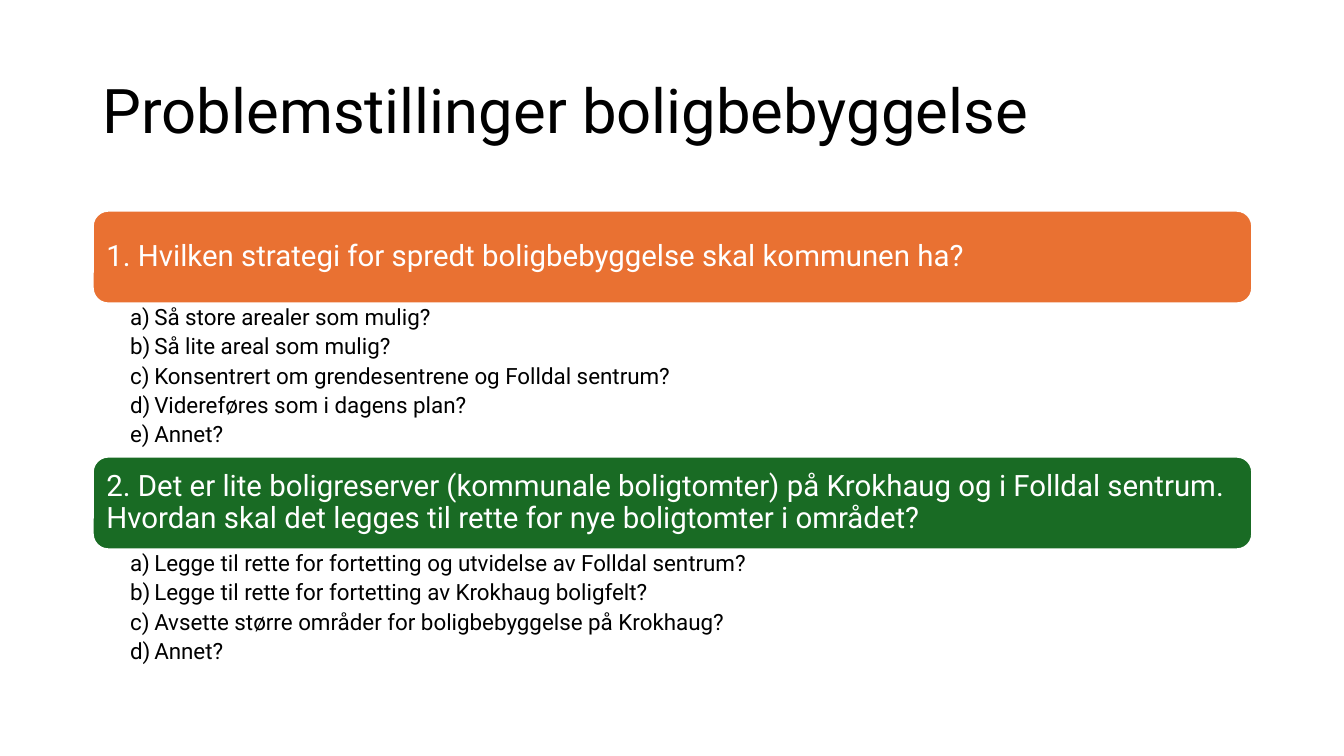
from dataclasses import dataclass

from lxml.etree import SubElement
from pptx import Presentation
from pptx.dml.color import RGBColor
from pptx.enum.shapes import MSO_SHAPE as Preset
from pptx.enum.text import MSO_ANCHOR as Anchor, PP_ALIGN as Align
from pptx.oxml.ns import qn
from pptx.slide import Slide
from pptx.text.text import TextFrame, _Paragraph as Paragraph
from pptx.util import Inches, Pt

BLACK = RGBColor(0x00, 0x00, 0x00)
WHITE = RGBColor(0xFF, 0xFF, 0xFF)
ORANGE = RGBColor(0xE9, 0x71, 0x32)
GREEN = RGBColor(0x19, 0x6B, 0x24)

FONT = "Roboto"
LEFT = 0.92
WIDTH = 11.5
TOP = 2.09
HEADING_HEIGHT = 0.92
LETTER_INDENT = 0.24


@dataclass(frozen=True)
class Issue:
    heading: str
    color: RGBColor
    options: tuple[str, ...]
    options_height: float


ISSUES = (
    Issue(
        "1. Hvilken strategi for spredt boligbebyggelse skal kommunen ha?",
        ORANGE,
        (
            "Så store arealer som mulig?",
            "Så lite areal som mulig?",
            "Konsentrert om grendesentrene og Folldal sentrum?",
            "Videreføres som i dagens plan?",
            "Annet?",
        ),
        1.52,
    ),
    Issue(
        "2. Det er lite boligreserver (kommunale boligtomter) på Krokhaug og i "
        "Folldal sentrum. Hvordan skal det legges til rette for nye boligtomter "
        "i området?",
        GREEN,
        (
            "Legge til rette for fortetting og utvidelse av Folldal sentrum?",
            "Legge til rette for fortetting av Krokhaug boligfelt?",
            "Avsette større områder for boligbebyggelse på Krokhaug?",
            "Annet?",
        ),
        1.21,
    ),
)


def set_frame(frame: TextFrame, anchor: Anchor, left: float, top: float,
              right: float) -> None:
    frame.word_wrap = True
    frame.vertical_anchor = anchor
    frame.margin_left = Inches(left)
    frame.margin_right = Inches(right)
    frame.margin_top = frame.margin_bottom = Inches(top)


def write(paragraph: Paragraph, text: str, size: float, color: RGBColor) -> None:
    paragraph.alignment = Align.LEFT
    paragraph.line_spacing = 0.9
    run = paragraph.add_run()
    run.text = text
    run.font.name = FONT
    run.font.size = Pt(size)
    run.font.color.rgb = color


def add_letter(paragraph: Paragraph) -> None:
    properties = paragraph._p.get_or_add_pPr()
    properties.set("marL", str(Inches(LETTER_INDENT)))
    properties.set("indent", str(-Inches(LETTER_INDENT)))
    SubElement(properties, qn("a:buFont"), typeface="+mj-lt")
    SubElement(properties, qn("a:buAutoNum"), type="alphaLcParenR")


def add_title(slide: Slide, text: str) -> None:
    title = slide.shapes.add_textbox(
        Inches(LEFT), Inches(0.4), Inches(WIDTH), Inches(1.45))
    set_frame(title.text_frame, Anchor.MIDDLE, 0.1, 0.05, 0.1)
    write(title.text_frame.paragraphs[0], text, 44, BLACK)


def add_heading(slide: Slide, issue: Issue, top: float) -> None:
    heading = slide.shapes.add_shape(
        Preset.ROUNDED_RECTANGLE, Inches(LEFT), Inches(top),
        Inches(WIDTH), Inches(HEADING_HEIGHT))
    heading.shadow.inherit = False
    heading.fill.solid()
    heading.fill.fore_color.rgb = issue.color
    heading.line.color.rgb = WHITE
    heading.line.width = Pt(1.5)
    set_frame(heading.text_frame, Anchor.MIDDLE, 0.09, 0.09, 0.09)
    write(heading.text_frame.paragraphs[0], issue.heading, 21, WHITE)


def add_options(slide: Slide, issue: Issue, top: float) -> None:
    options = slide.shapes.add_textbox(
        Inches(LEFT), Inches(top), Inches(WIDTH), Inches(issue.options_height))
    frame = options.text_frame
    set_frame(frame, Anchor.TOP, 0.37, 0.03, 0.16)
    for index, option in enumerate(issue.options):
        paragraph = frame.add_paragraph() if index else frame.paragraphs[0]
        add_letter(paragraph)
        paragraph.space_after = Pt(3.6)
        write(paragraph, option, 16, BLACK)


def main() -> None:
    deck = Presentation()
    deck.slide_width = Inches(13.33)
    deck.slide_height = Inches(7.5)
    slide = deck.slides.add_slide(deck.slide_layouts[6])
    add_title(slide, "Problemstillinger boligbebyggelse")
    top = TOP
    for issue in ISSUES:
        add_heading(slide, issue, top)
        add_options(slide, issue, top + HEADING_HEIGHT)
        top += HEADING_HEIGHT + issue.options_height
    deck.save("out.pptx")


if __name__ == "__main__":
    main()
